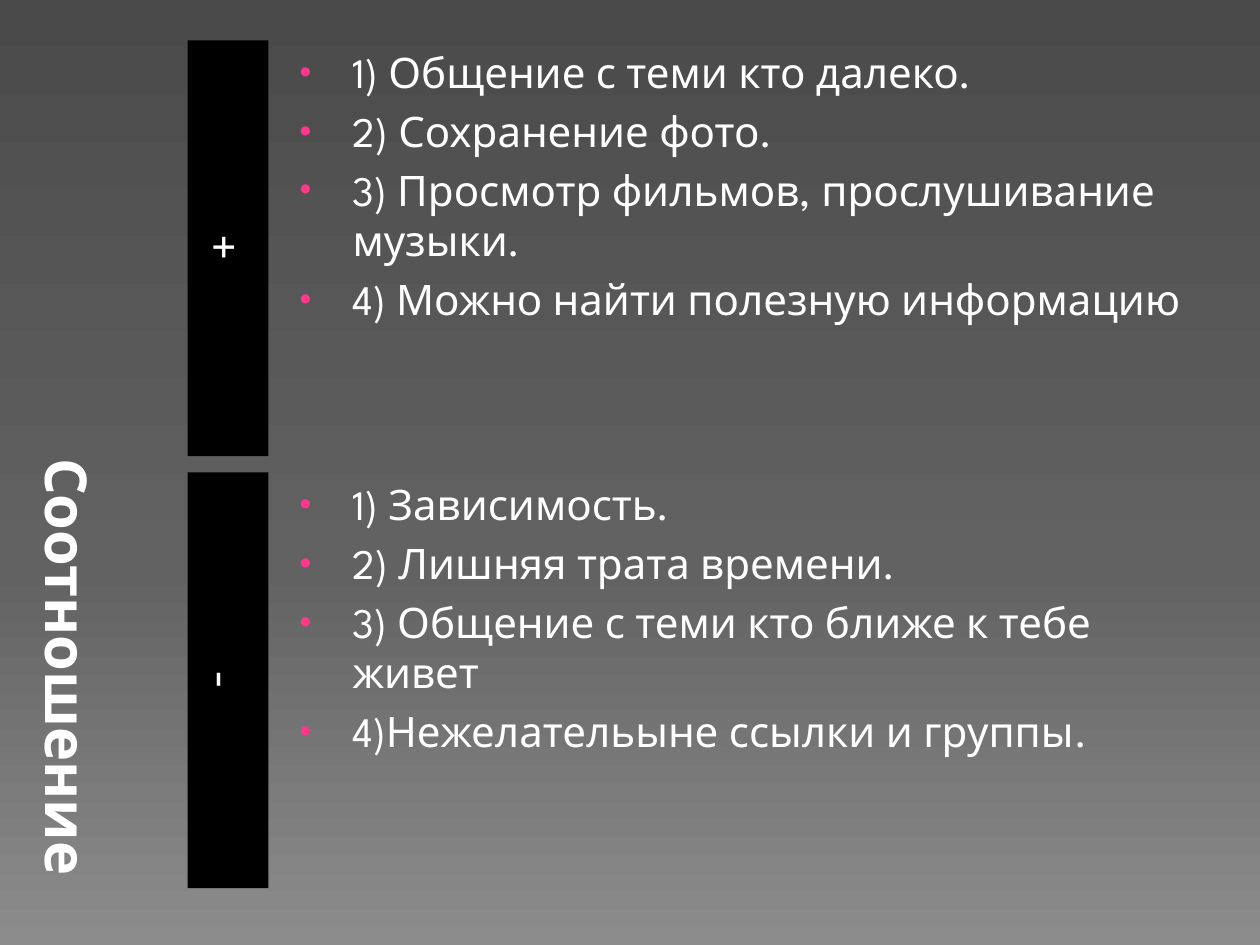
from copy import deepcopy
from dataclasses import dataclass

from lxml.etree import SubElement
from pptx import Presentation
from pptx.dml.color import RGBColor
from pptx.enum.shapes import MSO_SHAPE
from pptx.enum.text import MSO_ANCHOR, PP_ALIGN
from pptx.oxml.ns import qn
from pptx.shapes.autoshape import Shape
from pptx.slide import Slide
from pptx.text.text import _Paragraph as Paragraph
from pptx.util import Inches, Pt


@dataclass(frozen=True)
class Theme:
    font: str = "League Spartan"
    text: str = "FFFFFF"
    bar: str = "000000"
    bullet: str = "FF388C"
    background: tuple = ((0, "4A4A4A"), (0.6, "626262"), (1, "8C8C8C"))
    title_size: float = 33
    sign_size: float = 28.8
    list_size: float = 24
    space_share: float = 0.2


@dataclass(frozen=True)
class Column:
    left: float
    width: float


@dataclass(frozen=True)
class Section:
    sign: str
    points: tuple[str, ...]


THEME = Theme()
TITLE_COLUMN = Column(0.27, 1.17)
SIGN_COLUMN = Column(1.49, 0.64)
LIST_COLUMN = Column(2.21, 7.5)
TOP, ROW_HEIGHT, ROW_GAP = 0.32, 3.3, 0.13
SECTIONS = (
    Section("+", (
        "1) Общение с теми кто далеко.",
        "2) Сохранение фото.",
        "3) Просмотр фильмов, прослушивание музыки.",
        "4) Можно найти полезную информацию",
    )),
    Section("-", (
        "1) Зависимость.",
        "2) Лишняя трата времени.",
        "3) Общение с теми кто ближе к тебе живет",
        "4)Нежелательыне ссылки и группы.",
    )),
)


def grid_box(column: Column, row: int, span: int = 1) -> tuple:
    top = TOP + row * (ROW_HEIGHT + ROW_GAP)
    height = span * ROW_HEIGHT + (span - 1) * ROW_GAP
    return tuple(Inches(value) for value in (column.left, top, column.width, height))


def paint_background(slide: Slide) -> None:
    fill = slide.background.fill
    fill.gradient()
    fill.gradient_angle = 270
    stop_list = slide.element.find(".//" + qn("a:gsLst"))
    stop_list.append(deepcopy(stop_list[-1]))
    for stop, (position, color) in zip(fill.gradient_stops, THEME.background):
        stop.position = position
        stop.color.rgb = RGBColor.from_string(color)


def format_paragraph(paragraph: Paragraph, size: float, bold: bool = False) -> None:
    for run in paragraph.runs:
        run.font.name = THEME.font
        run.font.size = Pt(size)
        run.font.bold = bold
        run.font.color.rgb = RGBColor.from_string(THEME.text)


def turn_text(shape: Shape, anchor: MSO_ANCHOR) -> None:
    shape.text_frame.word_wrap = True
    shape.text_frame.vertical_anchor = anchor
    shape.text_frame._txBody.bodyPr.set("vert", "vert")


def add_bullet(paragraph: Paragraph) -> None:
    properties = paragraph._p.get_or_add_pPr()
    properties.set("marL", str(Inches(0.49)))
    properties.set("indent", str(Inches(-0.42)))
    color = SubElement(properties, qn("a:buClr"))
    SubElement(color, qn("a:srgbClr"), val=THEME.bullet)
    SubElement(properties, qn("a:buSzPct"), val="80000")
    SubElement(properties, qn("a:buFont"), typeface="Arial")
    SubElement(properties, qn("a:buChar"), char="•")


def add_title(slide: Slide, text: str) -> None:
    shape = slide.shapes.add_textbox(*grid_box(TITLE_COLUMN, 0, span=2))
    turn_text(shape, MSO_ANCHOR.BOTTOM)
    frame = shape.text_frame
    frame.margin_left = 0
    frame.margin_bottom = Inches(0.1)
    frame.text = text
    frame.paragraphs[0].alignment = PP_ALIGN.RIGHT
    format_paragraph(frame.paragraphs[0], THEME.title_size, bold=True)


def add_sign(slide: Slide, sign: str, row: int) -> None:
    shape = slide.shapes.add_shape(MSO_SHAPE.RECTANGLE, *grid_box(SIGN_COLUMN, row))
    shape.shadow.inherit = False
    shape.fill.solid()
    shape.fill.fore_color.rgb = RGBColor.from_string(THEME.bar)
    shape.line.fill.background()
    turn_text(shape, MSO_ANCHOR.MIDDLE)
    shape.text_frame.text = sign
    paragraph = shape.text_frame.paragraphs[0]
    paragraph.alignment = PP_ALIGN.CENTER
    paragraph.space_before = Pt(THEME.sign_size * THEME.space_share)
    format_paragraph(paragraph, THEME.sign_size)


def add_list(slide: Slide, points: tuple[str, ...], row: int) -> None:
    frame = slide.shapes.add_textbox(*grid_box(LIST_COLUMN, row)).text_frame
    frame.word_wrap = True
    frame.text = "\n".join(points)
    for paragraph in frame.paragraphs:
        paragraph.space_before = Pt(THEME.list_size * THEME.space_share)
        add_bullet(paragraph)
        format_paragraph(paragraph, THEME.list_size)


def main() -> None:
    presentation = Presentation()
    presentation.slide_width = Inches(10)
    presentation.slide_height = Inches(7.5)
    slide = presentation.slides.add_slide(presentation.slide_layouts[6])
    paint_background(slide)
    add_title(slide, "Соотношение")
    for row, section in enumerate(SECTIONS):
        add_sign(slide, section.sign, row)
        add_list(slide, section.points, row)
    presentation.save("out.pptx")


if __name__ == "__main__":
    main()
